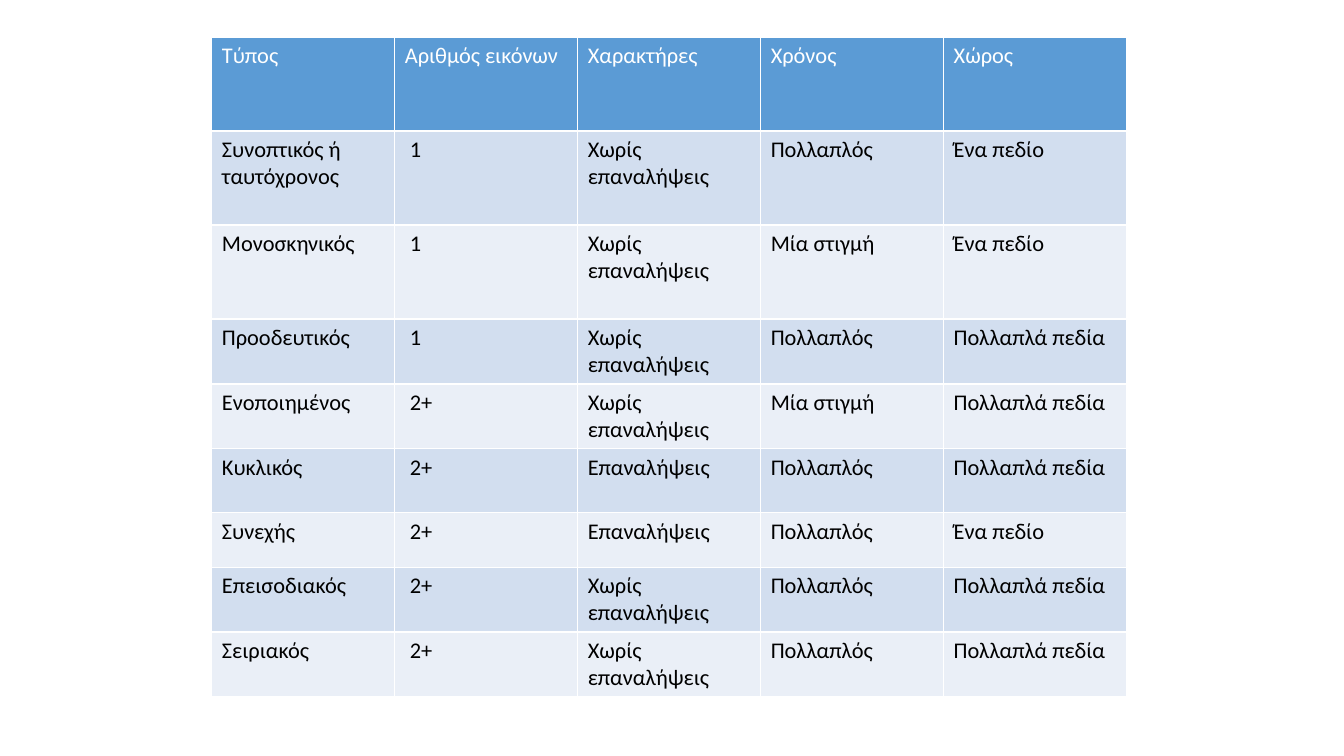
from typing import NamedTuple

from pptx import Presentation
from pptx.dml.color import RGBColor
from pptx.util import Cm, Pt


class Row(NamedTuple):
    height: float
    texts: tuple[str, ...]


HEADER_FILL, HEADER_INK, BODY_INK = "5B9BD5", "FFFFFF", "000000"
BAND_FILLS = ("EAEFF7", "D2DEEF")
COL_WIDTH = 4.61
TALL, MEDIUM, SHORT = 2.37, 1.61, 1.37
COUNT_COL, COUNT_MARGIN = 1, 0.38

NO_REPEATS, REPEATS = "Χωρίς επαναλήψεις", "Επαναλήψεις"
MULTIPLE, ONE_MOMENT = "Πολλαπλός", "Μία στιγμή"
ONE_FIELD, MANY_FIELDS = "Ένα πεδίο", "Πολλαπλά πεδία"

ROWS = [
    Row(TALL, ("Tύπος", "Αριθμός εικόνων", "Χαρακτήρες", "Χρόνος", "Χώρος")),
    Row(TALL, ("Συνοπτικός ή ταυτόχρονος", "1", NO_REPEATS, MULTIPLE, ONE_FIELD)),
    Row(TALL, ("Μονοσκηνικός", "1", NO_REPEATS, ONE_MOMENT, ONE_FIELD)),
    Row(MEDIUM, ("Προοδευτικός", "1", NO_REPEATS, MULTIPLE, MANY_FIELDS)),
    Row(MEDIUM, ("Ενοποιημένος", "2+", NO_REPEATS, ONE_MOMENT, MANY_FIELDS)),
    Row(MEDIUM, ("Κυκλικός", "2+", REPEATS, MULTIPLE, MANY_FIELDS)),
    Row(SHORT, ("Συνεχής", "2+", REPEATS, MULTIPLE, ONE_FIELD)),
    Row(MEDIUM, ("Επεισοδιακός", "2+", NO_REPEATS, MULTIPLE, MANY_FIELDS)),
    Row(MEDIUM, ("Σειριακός", "2+", NO_REPEATS, MULTIPLE, MANY_FIELDS)),
]


def color(value: str) -> RGBColor:
    return RGBColor.from_string(value)


def fill_cell(cell, text: str, fill: str, ink: str) -> None:
    cell.fill.solid()
    cell.fill.fore_color.rgb = color(fill)
    cell.text_frame.text = text
    r = cell.text_frame.paragraphs[0].runs[0]
    r.font.name = "Calibri"
    r.font.size = Pt(16)
    r.font.bold = False
    r.font.color.rgb = color(ink)


def add_type_table(s, rows: list[Row], left: float, top: float) -> None:
    n_cols = len(rows[0].texts)
    height = sum(row.height for row in rows)
    table = s.shapes.add_table(
        len(rows), n_cols, Cm(left), Cm(top), Cm(COL_WIDTH * n_cols), Cm(height)
    ).table
    for col in table.columns:
        col.width = Cm(COL_WIDTH)
    for i, row in enumerate(rows):
        table.rows[i].height = Cm(row.height)
        fill = BAND_FILLS[i % 2] if i else HEADER_FILL
        for j, text in enumerate(row.texts):
            cell = table.cell(i, j)
            fill_cell(cell, text, fill, BODY_INK if i else HEADER_INK)
            if i and j == COUNT_COL:
                cell.margin_left = Cm(COUNT_MARGIN)


def main() -> None:
    prs = Presentation()
    prs.slide_width, prs.slide_height = Cm(33.87), Cm(19.05)
    s = prs.slides.add_slide(prs.slide_layouts[6])
    add_type_table(s, ROWS, left=5.34, top=0.93)
    prs.save("out.pptx")


if __name__ == "__main__":
    main()
